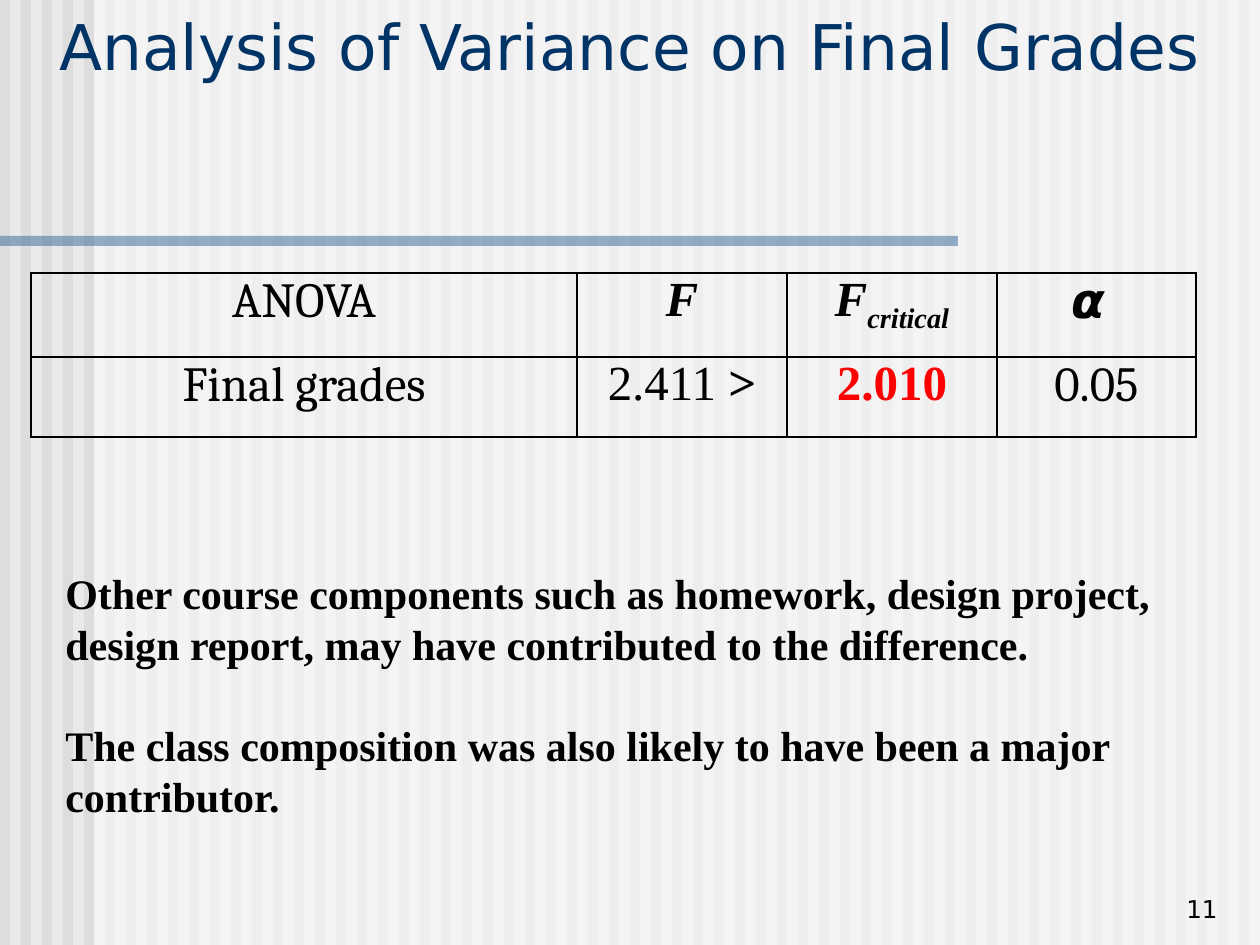
from lxml import etree
from pptx import Presentation
from pptx.dml.color import RGBColor
from pptx.enum.shapes import MSO_SHAPE
from pptx.enum.text import MSO_ANCHOR, PP_ALIGN
from pptx.oxml.ns import qn
from pptx.util import Emu, Pt

RECTANGLE = MSO_SHAPE.RECTANGLE
LEFT, CENTER, RIGHT = PP_ALIGN.LEFT, PP_ALIGN.CENTER, PP_ALIGN.RIGHT
TOP, MIDDLE, BOTTOM = MSO_ANCHOR.TOP, MSO_ANCHOR.MIDDLE, MSO_ANCHOR.BOTTOM

PX_PER_INCH = 126
WIDTH, HEIGHT = 1260, 945
STRIPE_PITCH, STRIPE_WIDTH = 21, 10
SANS, SERIF, CAMBRIA = "DejaVu Sans", "Times New Roman", "Cambria"
BLACK, RED, NAVY = "000000", "FF0000", "003366"


def px(length):
    return Emu(round(length * 914400 / PX_PER_INCH))


def color(value):
    return RGBColor.from_string(value)


class SlideBuilder:
    """Holds the text style and the current slide, and adds elements to it."""

    def __init__(self, deck, background):
        self.base = {"name": SERIF, "size": 28, "color": BLACK, "bold": False, "italic": False}
        self.slide = deck.slides.add_slide(deck.slide_layouts[5])
        self.shapes = self.slide.shapes
        fill = self.slide.background.fill
        fill.solid()
        fill.fore_color.rgb = color(background)

    def place(self, shape, bounds):
        for name, length in zip(("left", "top", "width", "height"), bounds):
            setattr(shape, name, px(length))

    def add_spans(self, para, spans, align, paragraph_format=None):
        para.alignment = align
        for name, value in (paragraph_format or {}).items():
            setattr(para, name, value)
        for text, changes in spans:
            style = {**self.base, **changes}
            span = para.add_run()
            span.text = text
            span.font.color.rgb = color(style.pop("color"))
            style["size"] = Pt(style["size"])
            baseline = style.pop("baseline", None)
            for name, value in style.items():
                setattr(span.font, name, value)
            if baseline is not None:
                span._r.get_or_add_rPr().set("baseline", str(baseline))

    def rectangle(self, bounds, fill, opacity=100):
        shape = self.shapes.add_shape(RECTANGLE, *map(px, bounds))
        shape.shadow.inherit = False
        shape.line.fill.background()
        shape.fill.solid()
        shape.fill.fore_color.rgb = color(fill)
        if opacity < 100:
            rgb = shape.element.spPr.find(f".//{qn('a:srgbClr')}")
            etree.SubElement(rgb, qn("a:alpha"), val=str(opacity * 1000))

    def title(self, bounds, text, style):
        title = self.shapes.title
        self.place(title, bounds)
        title.text_frame.vertical_anchor = MIDDLE
        self.add_spans(title.text_frame.paragraphs[0], [(text, style)], CENTER)
        title.element.getparent().append(title.element)

    def text(self, bounds, paragraphs, style, align=LEFT, anchor=TOP):
        frame = self.shapes.add_textbox(*map(px, bounds)).text_frame
        frame.word_wrap = True
        frame.vertical_anchor = anchor
        for index, (text, paragraph_format) in enumerate(paragraphs):
            para = frame.add_paragraph() if index else frame.paragraphs[0]
            self.add_spans(para, [(text, style)], align, paragraph_format)

    def border(self, cell):
        properties = cell._tc.get_or_add_tcPr()
        for side in ("lnL", "lnR", "lnT", "lnB"):
            line = etree.SubElement(properties, qn(f"a:{side}"), w=str(int(Pt(1))))
            fill = etree.SubElement(line, qn("a:solidFill"))
            etree.SubElement(fill, qn("a:srgbClr"), val=BLACK)

    def table(self, left, top, widths, heights, rows):
        bounds = (left, top, sum(widths), sum(heights))
        table = self.shapes.add_table(len(heights), len(widths), *map(px, bounds)).table
        table.first_row = table.horz_banding = False
        margins = {"left": 9, "right": 9, "top": 0, "bottom": 0}
        for column, width in zip(table.columns, widths):
            column.width = px(width)
        for row, height, contents in zip(table.rows, heights, rows):
            row.height = px(height)
            for cell, spans in zip(row.cells, contents):
                self.border(cell)
                cell.fill.background()
                for side, length in margins.items():
                    setattr(cell, f"margin_{side}", px(length))
                self.add_spans(cell.text_frame.paragraphs[0], spans, CENTER)


def main():
    deck = Presentation()
    deck.slide_width, deck.slide_height = px(WIDTH), px(HEIGHT)
    page = SlideBuilder(deck, "EAEAEA")

    for left in range(0, WIDTH, STRIPE_PITCH):
        page.rectangle((left, 0, STRIPE_WIDTH, HEIGHT), "DDDDDD")
    page.rectangle((94, 0, WIDTH - 94, HEIGHT), "FFFFFF", opacity=50)
    page.rectangle((0, 236, 958, 10), "336699", opacity=50)

    page.title((0, 0, WIDTH, 90), "Analysis of Variance on Final Grades",
               {"name": SANS, "size": 36, "color": NAVY})
    page.text((968, 867, 262, 63), [("11", {})], {"name": SANS, "size": 14}, RIGHT, BOTTOM)

    cambria = {"name": CAMBRIA}
    bold = {"bold": True}
    symbol = {"bold": True, "italic": True}
    page.table(31, 273, (546, 210, 210, 199), (84, 80), [
        [
            [("ANOVA", cambria)],
            [("F", symbol)],
            [("F", symbol), ("critical", {**symbol, "baseline": -25000})],
            [("α ", {**symbol, "name": SANS})],
        ],
        [
            [("Final grades", cambria)],
            [("2.411 ", {}), (">", bold)],
            [("2.010", {**bold, "color": RED})],
            [("0.05", cambria)],
        ],
    ])

    line = {"line_spacing": Pt(29)}
    page.text((53, 561, 1121, 267), [
        ("Other course components such as homework, design project,", line),
        ("design report, may have contributed to the difference.", line),
        ("The class composition was also likely to have been a major",
         {**line, "space_before": Pt(29)}),
        ("contributor.", line),
    ], {"size": 24, "bold": True})

    deck.save("out.pptx")


if __name__ == "__main__":
    main()
